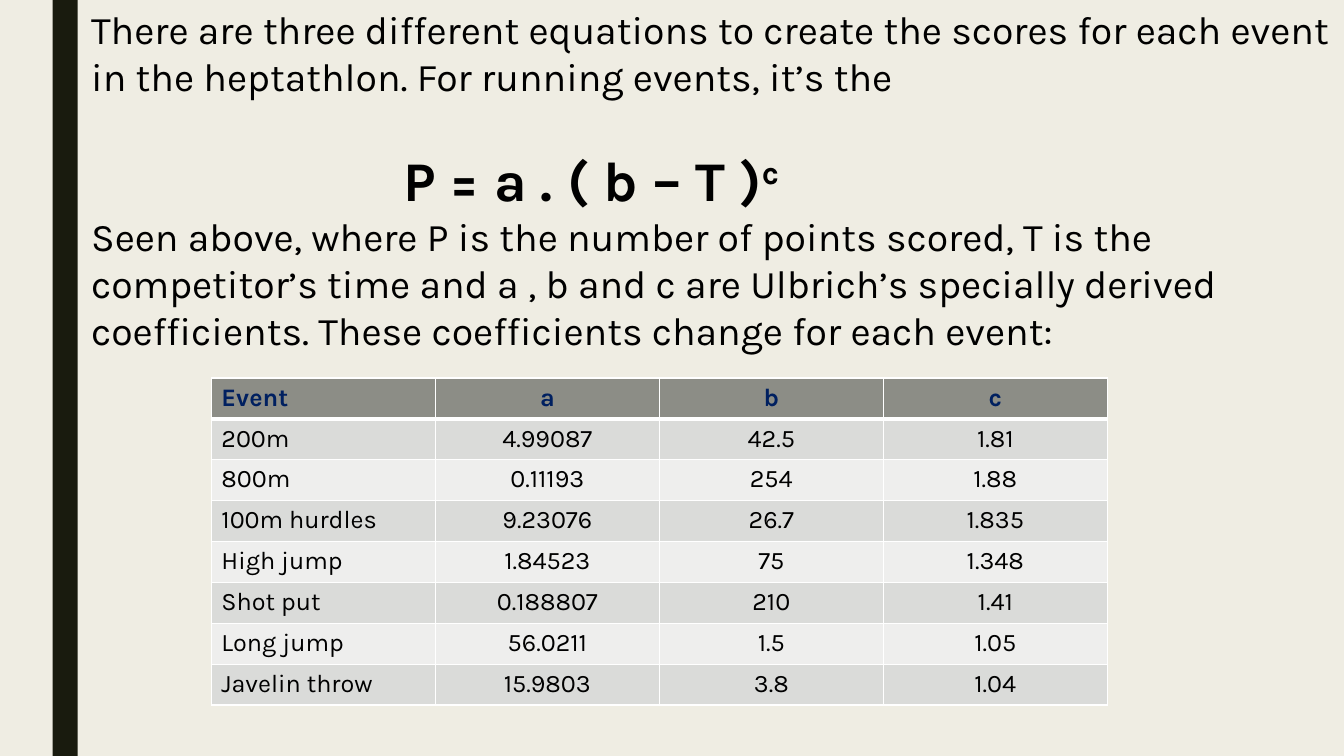
from lxml.etree import SubElement
from pptx import Presentation
from pptx.dml.color import RGBColor
from pptx.enum.shapes import MSO_SHAPE
from pptx.enum.text import PP_ALIGN
from pptx.oxml.ns import qn
from pptx.util import Pt

FONT = "Karla"
INTRO = ("There are three different equations to create the scores for each event "
         "in the heptathlon. For running events, it’s the")
EXPLANATION = ("Seen above, where P is the number of points scored, T is the competitor’s "
               "time and a , b and c are Ulbrich’s specially derived coefficients. "
               "These coefficients change for each event:")
COEFFICIENTS = [
    ("Event", "a", "b", "c"),
    ("200m", "4.99087", "42.5", "1.81"),
    ("800m", "0.11193", "254", "1.88"),
    ("100m hurdles", "9.23076", "26.7", "1.835"),
    ("High jump", "1.84523", "75", "1.348"),
    ("Shot put", "0.188807", "210", "1.41"),
    ("Long jump", "56.0211", "1.5", "1.05"),
    ("Javelin throw", "15.9803", "3.8", "1.04"),
]


def paint(color_format, value):
    color_format.rgb = RGBColor.from_string(value)


def fill_solid(fill, value):
    fill.solid()
    paint(fill.fore_color, value)


def add_span(para, text, size, color="000000", bold=False):
    span = para.add_run()
    span.text = text
    span.font.name = FONT
    span.font.size = Pt(size)
    span.font.bold = bold
    paint(span.font.color, color)
    return span


def add_side_bar(page, left, top, width, height):
    bar = page.shapes.add_shape(MSO_SHAPE.RECTANGLE, Pt(left), Pt(top), Pt(width), Pt(height))
    bar.shadow.inherit = False
    fill_solid(bar.fill, "191B0E")
    bar.line.fill.background()


def add_explanation(page, left, top, width, height):
    box = page.shapes.add_textbox(Pt(left), Pt(top), Pt(width), Pt(height))
    frame = box.text_frame
    frame.word_wrap = True
    add_span(frame.paragraphs[0], INTRO, 28)

    formula = frame.add_paragraph()
    formula.space_before = Pt(33)
    properties = formula._p.get_or_add_pPr()
    properties.set("marL", str(Pt(223)))
    properties.set("indent", "0")
    add_span(formula, "P = a . ( b – T )", 40, bold=True)
    exponent = add_span(formula, "c", 40, bold=True)
    exponent.font._element.set("baseline", "30000")

    add_span(frame.add_paragraph(), EXPLANATION, 28)


def set_borders(cell, widths):
    """Draw white cell borders; widths maps side letters L, R, T, B to points."""
    properties = cell._tc.get_or_add_tcPr()
    for side, width in widths.items():
        line = SubElement(properties, qn(f"a:ln{side}"), w=str(Pt(width)))
        solid = SubElement(line, qn("a:solidFill"))
        SubElement(solid, qn("a:srgbClr"), val="FFFFFF")


def add_coefficient_table(page, left, top, width, height):
    row_count, column_count = len(COEFFICIENTS), len(COEFFICIENTS[0])
    table = page.shapes.add_table(row_count, column_count, Pt(left), Pt(top),
                                  Pt(width), Pt(height)).table
    for column in table.columns:
        column.width = Pt(width / column_count)
    for row_index, values in enumerate(COEFFICIENTS):
        table.rows[row_index].height = Pt(height / row_count)
        is_header = row_index == 0
        band = "8C8D86" if is_header else ("EEEEED", "DADBD9")[row_index % 2]
        widths = {"L": 1, "R": 1, "T": 3 if row_index == 1 else 1, "B": 3 if is_header else 1}
        for column_index, value in enumerate(values):
            cell = table.cell(row_index, column_index)
            set_borders(cell, widths)
            fill_solid(cell.fill, band)
            para = cell.text_frame.paragraphs[0]
            para.alignment = PP_ALIGN.CENTER if column_index else PP_ALIGN.LEFT
            add_span(para, value, 18, "002060" if is_header else "000000", is_header)


def main():
    deck = Presentation()
    deck.slide_width, deck.slide_height = Pt(960), Pt(540)
    page = deck.slides.add_slide(deck.slide_layouts[6])
    fill_solid(page.background.fill, "EFEDE3")
    add_side_bar(page, 37.5, 0, 18, 540)
    add_explanation(page, 58, 0, 902, 327)
    add_coefficient_table(page, 151, 270, 640, 233.6)
    deck.save("out.pptx")


if __name__ == "__main__":
    main()
